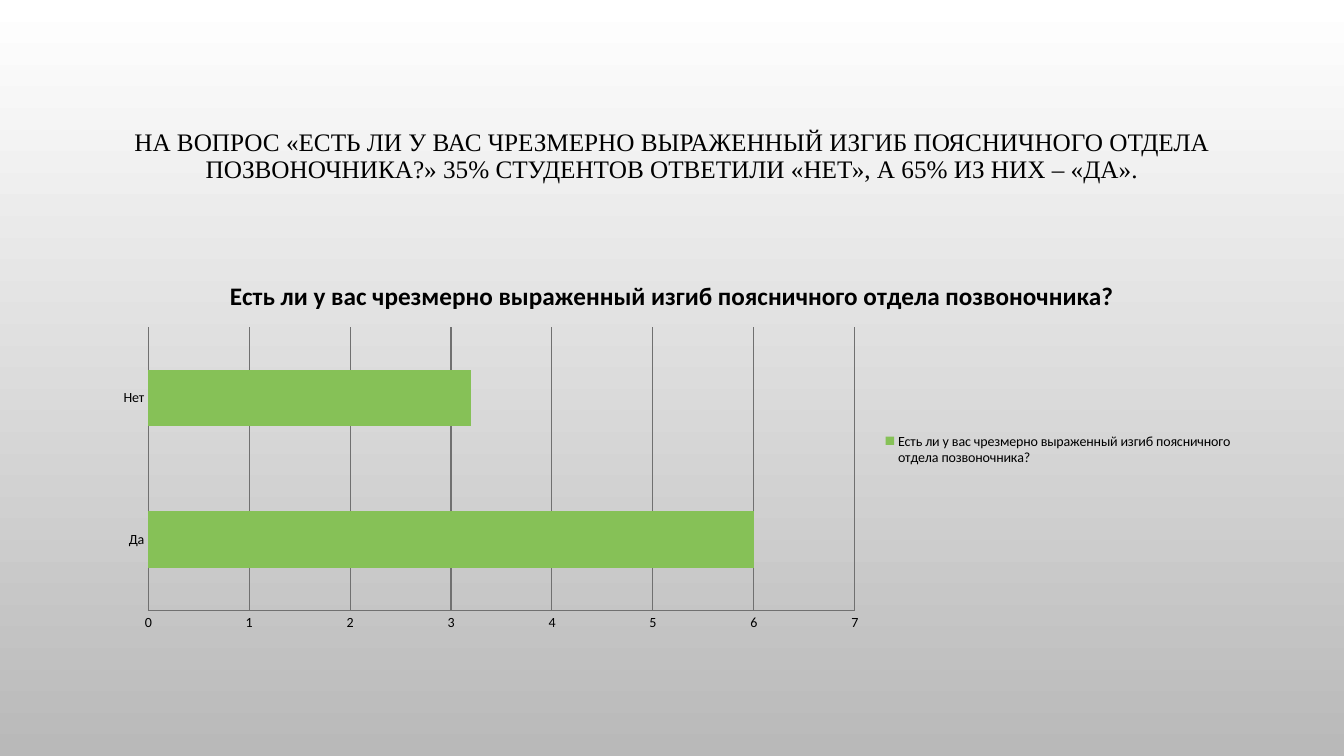
from pptx import Presentation
from pptx.chart.data import CategoryChartData
from pptx.dml.color import RGBColor
from pptx.enum.chart import XL_CHART_TYPE, XL_LEGEND_POSITION, XL_TICK_MARK
from pptx.enum.text import MSO_ANCHOR, PP_ALIGN
from pptx.util import Pt

QUESTION = "Есть ли у вас чрезмерно выраженный изгиб поясничного отдела позвоночника?"
FINDING = (
    "НА ВОПРОС «ЕСТЬ ЛИ У ВАС ЧРЕЗМЕРНО ВЫРАЖЕННЫЙ ИЗГИБ ПОЯСНИЧНОГО ОТДЕЛА "
    "ПОЗВОНОЧНИКА?» 35% СТУДЕНТОВ ОТВЕТИЛИ «НЕТ», А 65% ИЗ НИХ – «ДА»."
)
ANSWERS = {"Да": 6, "Нет": 3.2}


def color(value):
    return RGBColor.from_string(value)


class SurveySlide:
    """Holds the style and the current slide, and adds its elements."""

    ink = "000000"
    rule = "707070"
    bar = "86C157"
    heading_font = "Times New Roman"
    chart_font = "Calibri"

    def __init__(self, slide):
        self.slide = slide

    def style_font(self, font, name, size, bold=False):
        font.name = name
        font.size = Pt(size)
        font.bold = bold
        font.color.rgb = color(self.ink)

    def style_line(self, line):
        line.color.rgb = color(self.rule)
        line.width = Pt(0.75)

    def background(self, top, bottom):
        fill = self.slide.background.fill
        fill.gradient()
        fill.gradient_angle = 270
        for stop, shade in zip(fill.gradient_stops, (top, bottom)):
            stop.color.rgb = color(shade)

    def heading(self, words, left, top, width, height):
        frame = self.slide.shapes.add_textbox(
            Pt(left), Pt(top), Pt(width), Pt(height)
        ).text_frame
        frame.word_wrap = True
        frame.vertical_anchor = MSO_ANCHOR.MIDDLE
        paragraph = frame.paragraphs[0]
        paragraph.alignment = PP_ALIGN.CENTER
        paragraph.line_spacing = 0.9
        run = paragraph.add_run()
        run.text = words
        self.style_font(run.font, self.heading_font, 18)

    def bar_chart(self, question, answers, left, top, width, height):
        data = CategoryChartData()
        data.categories = list(answers)
        data.add_series(question, list(answers.values()))
        chart = self.slide.shapes.add_chart(
            XL_CHART_TYPE.BAR_CLUSTERED,
            Pt(left), Pt(top), Pt(width), Pt(height), data,
        ).chart
        self.style_font(chart.font, self.chart_font, 10)

        chart.has_title = True
        run = chart.chart_title.text_frame.paragraphs[0].add_run()
        run.text = question
        self.style_font(run.font, self.chart_font, 18, bold=True)
        chart.chart_title.include_in_layout = False

        chart.has_legend = True
        chart.legend.position = XL_LEGEND_POSITION.RIGHT
        chart.legend.include_in_layout = False
        self.style_font(chart.legend.font, self.chart_font, 10)

        for axis in (chart.category_axis, chart.value_axis):
            axis.major_tick_mark = XL_TICK_MARK.NONE
            axis.minor_tick_mark = XL_TICK_MARK.NONE
            self.style_font(axis.tick_labels.font, self.chart_font, 10)
            self.style_line(axis.format.line)
        chart.value_axis.has_major_gridlines = True
        self.style_line(chart.value_axis.major_gridlines.format.line)

        plot = chart.plots[0]
        plot.gap_width = 150
        plot.vary_by_categories = False
        fill = plot.series[0].format.fill
        fill.solid()
        fill.fore_color.rgb = color(self.bar)


def main():
    presentation = Presentation()
    presentation.slide_width = Pt(960)
    presentation.slide_height = Pt(540)
    survey = SurveySlide(presentation.slides.add_slide(presentation.slide_layouts[6]))
    survey.background("FFFFFF", "B9B9B9")
    survey.heading(FINDING, 72, 49, 816, 126)
    survey.bar_chart(QUESTION, ANSWERS, 72, 186.5, 816, 269.3)
    presentation.save("out.pptx")


if __name__ == "__main__":
    main()
